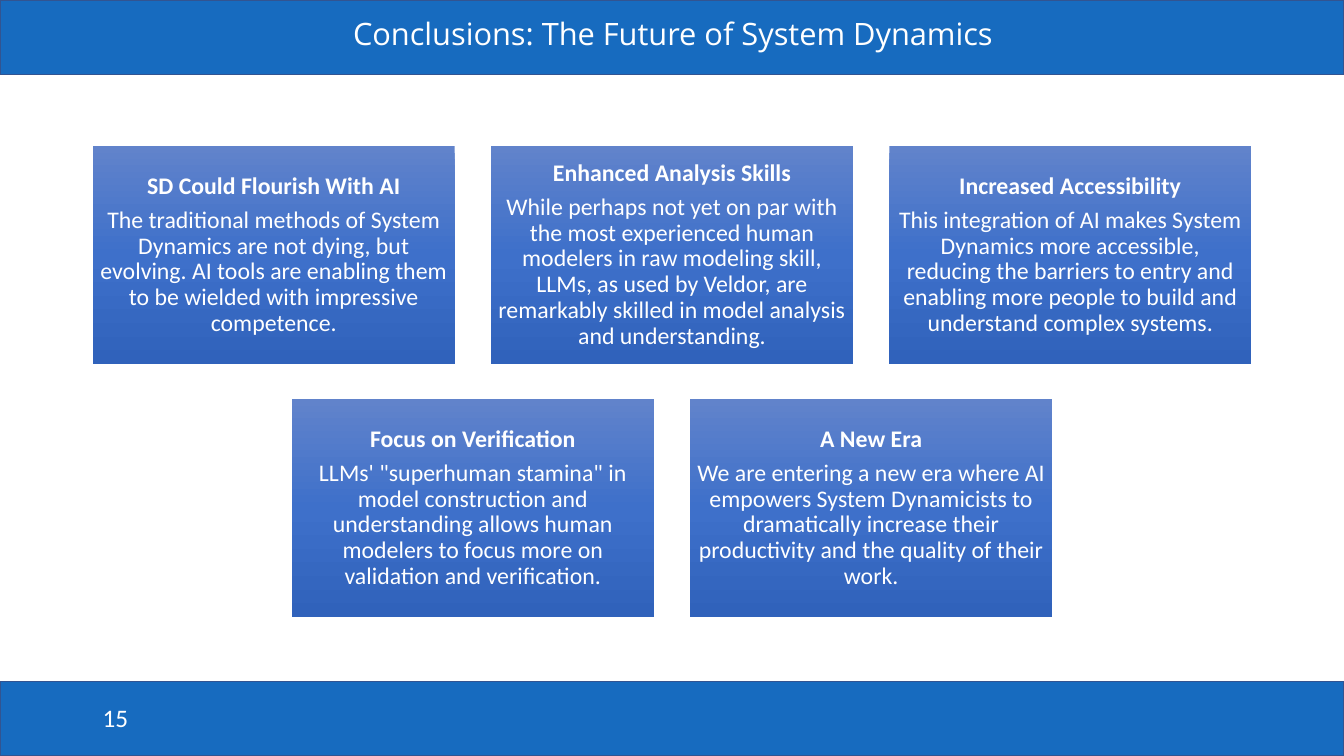
from copy import deepcopy

from pptx import Presentation
from pptx.dml.color import RGBColor
from pptx.enum.shapes import MSO_SHAPE as Shape
from pptx.enum.text import MSO_ANCHOR as Anchor, PP_ALIGN as Align
from pptx.oxml.ns import qn
from pptx.util import Inches, Pt

WIDE, HIGH = 13.33, 7.5
BAR = 0.74
CARD_W, CARD_H, GAP = 3.59, 2.16, 0.36
TOP, STEP = 1.45, 2.51
STOPS = [(0, "6183CB"), (0.5, "3E70CA"), (1, "3062BB")]

ROWS = [
    [
        ("SD Could Flourish With AI",
         "The traditional methods of System Dynamics are not dying, but evolving. "
         "AI tools are enabling them to be wielded with impressive competence."),
        ("Enhanced Analysis Skills",
         "While perhaps not yet on par with the most experienced human modelers in "
         "raw modeling skill, LLMs, as used by Veldor, are remarkably skilled in "
         "model analysis and understanding."),
        ("Increased Accessibility",
         "This integration of AI makes System Dynamics more accessible, reducing the "
         "barriers to entry and enabling more people to build and understand "
         "complex systems."),
    ],
    [
        ("Focus on Verification",
         "LLMs' \"superhuman stamina\" in model construction and understanding allows "
         "human modelers to focus more on validation and verification."),
        ("A New Era",
         "We are entering a new era where AI empowers System Dynamicists to "
         "dramatically increase their productivity and the quality of their work."),
    ],
]


def color(code):
    return RGBColor.from_string(code)


def write(para, text, size, face, align, after=0, bold=False):
    """Fill a paragraph with one white run."""
    para.alignment = align
    para.line_spacing = 0.9
    para.space_after = Pt(after)
    run = para.add_run()
    run.text = text
    run.font.size = Pt(size)
    run.font.name = face
    run.font.bold = bold
    run.font.color.rgb = color("FFFFFF")


prs = Presentation()
prs.slide_width, prs.slide_height = Inches(WIDE), Inches(HIGH)
slide = prs.slides.add_slide(prs.slide_layouts[6])
shapes = slide.shapes

# Header and footer bars
for y in (0, HIGH - BAR):
    bar = shapes.add_shape(Shape.RECTANGLE, 0, Inches(y), Inches(WIDE), Inches(BAR))
    bar.shadow.inherit = False
    bar.fill.solid()
    bar.fill.fore_color.rgb = color("176BBF")
    bar.line.color.rgb = color("325491")
    bar.line.width = Pt(1)

# Page number and title
page = shapes.add_textbox(Inches(0.92), Inches(6.95), Inches(3), Inches(0.4))
page.text_frame.word_wrap = True
write(page.text_frame.paragraphs[0], "15", 18, "Calibri", Align.LEFT, 6)

title = shapes.add_textbox(Inches(0.93), Inches(0.13), Inches(11.49), Inches(0.45))
title.text_frame.word_wrap = True
title.text_frame.vertical_anchor = Anchor.MIDDLE
write(title.text_frame.paragraphs[0], "Conclusions: The Future of System Dynamics",
      22, "Open Sans", Align.CENTER)

# Cards, each row centred on the slide
for row, cards in enumerate(ROWS):
    left = (WIDE - len(cards) * (CARD_W + GAP) + GAP) / 2
    for col, (head, body) in enumerate(cards):
        card = shapes.add_shape(
            Shape.RECTANGLE, Inches(left + col * (CARD_W + GAP)),
            Inches(TOP + row * STEP), Inches(CARD_W), Inches(CARD_H))
        card.shadow.inherit = False
        card.line.fill.background()
        card.fill.gradient()
        card.fill.gradient_angle = 270
        stops = card.element.find(".//" + qn("a:gsLst"))
        stops.insert(1, deepcopy(stops[0]))
        for stop, (place, code) in zip(card.fill.gradient_stops, STOPS):
            stop.position = place
            stop.color.rgb = color(code)

        frame = card.text_frame
        frame.word_wrap = True
        frame.vertical_anchor = Anchor.MIDDLE
        frame.margin_left = frame.margin_right = Inches(0.07)
        frame.margin_top = frame.margin_bottom = Inches(0.07)
        write(frame.paragraphs[0], head, 17, "Calibri", Align.CENTER, 6, True)
        write(frame.add_paragraph(), body, 17, "Calibri", Align.CENTER, 6)

prs.save("out.pptx")
